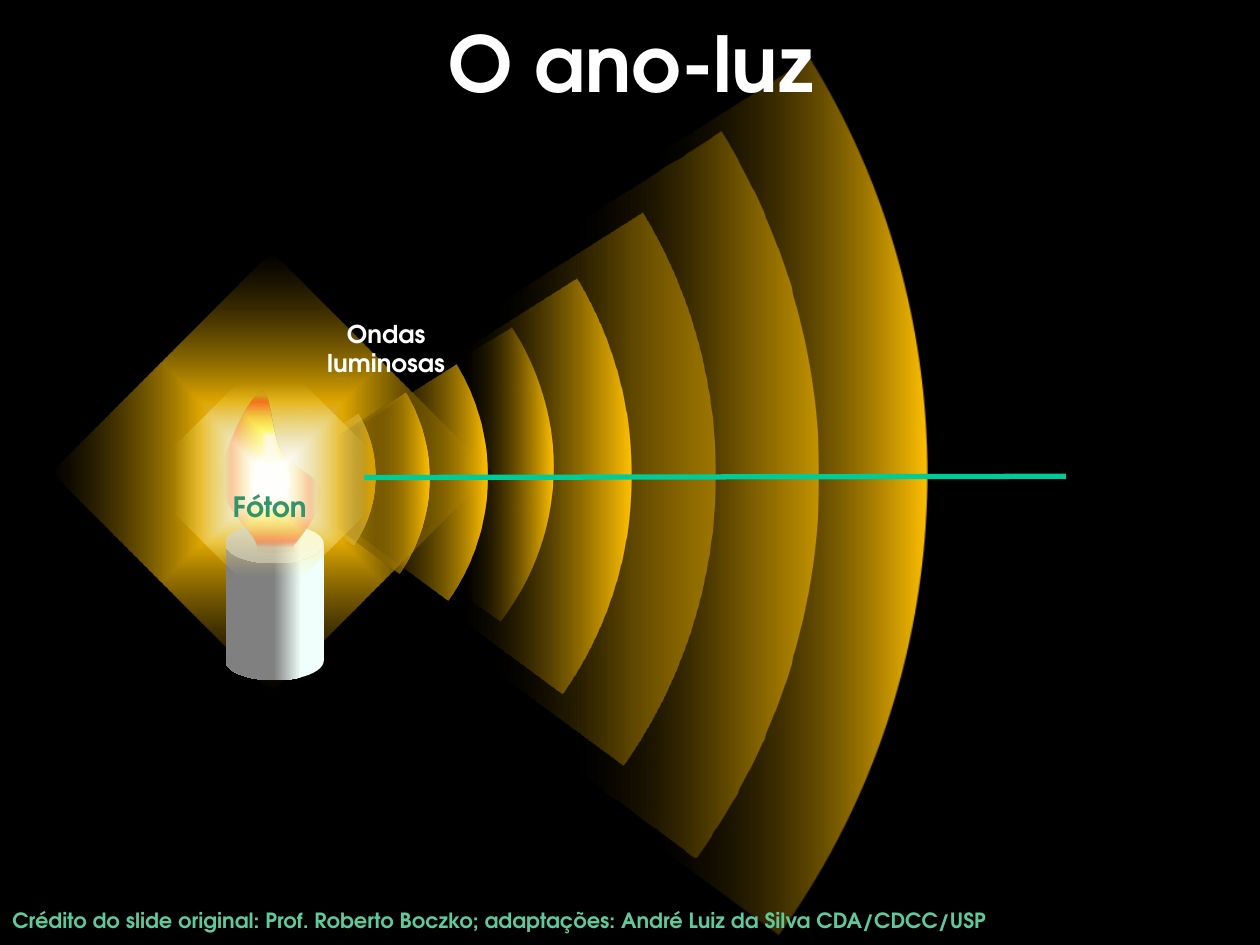
import pptx
import pptx.dml.color
import pptx.enum.shapes
import pptx.enum.text
import pptx.oxml
import pptx.oxml.ns
import pptx.util
from pptx.util import Inches

RGBColor = pptx.dml.color.RGBColor
SHAPE = pptx.enum.shapes.MSO_SHAPE
ALIGN = pptx.enum.text.PP_ALIGN
qn = pptx.oxml.ns.qn

FONT = "TeX Gyre Adventor"
BLACK = RGBColor(0x00, 0x00, 0x00)
WHITE = RGBColor(0xFF, 0xFF, 0xFF)
AMBER = RGBColor(0xFF, 0xC0, 0x00)
SILVER = RGBColor(0xDB, 0xDB, 0xDB)
GRAY = RGBColor(0x80, 0x80, 0x80)
WAX = RGBColor(0xF0, 0xFF, 0xFB)
YELLOW = RGBColor(0xFF, 0xFF, 0x00)
PALE_YELLOW = RGBColor(0xFD, 0xE6, 0x5D)
ORANGE = RGBColor(0xEA, 0x8D, 0x04)
RED = RGBColor(0xFF, 0x33, 0x00)
DARK_RED = RGBColor(0xC0, 0x00, 0x00)
RAY_GREEN = RGBColor(0x00, 0xCC, 0x99)
CREDIT_GREEN = RGBColor(0x60, 0xC9, 0x9C)
PHOTON_GREEN = RGBColor(0x32, 0x94, 0x6A)

ARC_START, ARC_END = -32.3, 36.4


def paint_gradient(shape, stops, angle=None):
    marks = "".join(
        f'<a:gs pos="{position * 1000}"><a:srgbClr val="{color}">'
        f'<a:alpha val="{opacity * 1000}"/></a:srgbClr></a:gs>'
        for position, color, opacity in stops
    )
    if angle is None:
        direction = ('<a:path path="shape"><a:fillToRect l="50000" t="50000" '
                     'r="50000" b="50000"/></a:path>')
    else:
        direction = f'<a:lin ang="{angle * 60000}" scaled="1"/>'
    gradient = pptx.oxml.parse_xml(
        f'<a:gradFill {pptx.oxml.ns.nsdecls("a")} rotWithShape="1">'
        f'<a:gsLst>{marks}</a:gsLst>{direction}</a:gradFill>'
    )
    shape.fill.background()
    properties = shape.element.spPr
    properties.replace(properties.find(qn("a:noFill")), gradient)
    shape.line.fill.background()
    shape.shadow.inherit = False


def add_preset(shapes, kind, box, stops, angle=None, rotation=0, flip=False):
    shape = shapes.add_shape(kind, *map(Inches, box))
    shape.rotation = rotation
    if flip:
        shape.element.spPr.find(qn("a:xfrm")).set("flipH", "1")
    paint_gradient(shape, stops, angle)
    return shape


def add_wave(shapes, left, top, width, height, fade, near=(0, AMBER, 100), far=BLACK):
    wave = add_preset(shapes, SHAPE.ARC, (left, top, width, height),
                      [near, (fade, far, 0)], 180)
    wave.adjustments[0] = ARC_START % 360 * 0.6
    wave.adjustments[1] = ARC_END * 0.6


def curve_points(start, curves, steps=16):
    points = [start]
    for a, b, end in curves:
        begin = points[-1]
        for step in range(1, steps + 1):
            t = step / steps
            u = 1 - t
            points.append(tuple(
                u**3 * p + 3 * u * u * t * q + 3 * u * t * t * r + t**3 * s
                for p, q, r, s in zip(begin, a, b, end)
            ))
    return points


def add_outline(shapes, points, stops, angle=None):
    corners = [(Inches(x), Inches(y)) for x, y in points]
    builder = shapes.build_freeform(*corners[0])
    builder.add_line_segments(corners[1:], close=True)
    paint_gradient(builder.convert_to_shape(), stops, angle)


def write_lines(frame, lines, size, color, align):
    for number, line in enumerate(lines):
        paragraph = frame.paragraphs[0] if number == 0 else frame.add_paragraph()
        paragraph.alignment = align
        run = paragraph.add_run()
        run.text = line
        run.font.name = FONT
        run.font.size = pptx.util.Pt(size)
        run.font.bold = True
        run.font.color.rgb = color


def add_label(shapes, box, lines, size, color, align=ALIGN.CENTER, wrap=False):
    label = shapes.add_textbox(*map(Inches, box))
    label.text_frame.word_wrap = wrap
    label.text_frame.auto_size = pptx.enum.text.MSO_AUTO_SIZE.SHAPE_TO_FIT_TEXT
    write_lines(label.text_frame, lines, size, color, align)


def place_title(slide):
    title = slide.shapes.title
    title.left, title.top, title.width, title.height = map(Inches, (0.11, 0.07, 9.8, 0.84))
    title.text_frame.vertical_anchor = pptx.enum.text.MSO_ANCHOR.MIDDLE
    write_lines(title.text_frame, ["O ano-luz"], 44, WHITE, ALIGN.CENTER)
    title.element.getparent().append(title.element)


def add_candle(shapes):
    candle = shapes.add_group_shape().shapes
    body = add_preset(candle, SHAPE.CAN, (1.79, 4.16, 0.78, 1.24),
                      [(23, WAX, 100), (51, GRAY, 100)], 0, flip=True)
    body.adjustments[0] = 0.4
    flame = curve_points((2.33, 4.32), [
        ((2.45, 4.17), (2.56, 4.02), (2.54, 3.89)),
        ((2.53, 3.77), (2.3, 3.71), (2.23, 3.58)),
        ((2.15, 3.45), (2.15, 3.07), (2.07, 3.1)),
        ((1.99, 3.14), (1.76, 3.59), (1.75, 3.79)),
        ((1.74, 3.98), (1.96, 4.17), (2.01, 4.26)),
        ((2.07, 4.36), (2.01, 4.35), (2.07, 4.37)),
        ((2.12, 4.39), (2.23, 4.38), (2.33, 4.37)),
    ])
    add_outline(candle, flame, [(8, WHITE, 100), (19, YELLOW, 100), (57, ORANGE, 100),
                                (76, RED, 75), (89, DARK_RED, 5)])


def add_ray(shapes):
    ray = shapes.add_connector(pptx.enum.shapes.MSO_CONNECTOR.STRAIGHT,
                               *map(Inches, (8.46, 3.78, 2.89, 3.79)))
    ray.line.color.rgb = RAY_GREEN
    ray.line.width = pptx.util.Pt(3)
    ray.element.spPr.append(pptx.oxml.parse_xml(
        f'<a:effectLst {pptx.oxml.ns.nsdecls("a")}/>'))


def add_photon(shapes):
    photon = shapes.add_group_shape().shapes
    add_preset(photon, SHAPE.OVAL, (1.98, 3.63, 0.33, 0.33),
               [(0, YELLOW, 100), (41, WHITE, 100), (97, YELLOW, 100)], flip=True)
    add_preset(photon, SHAPE.RECTANGLE, (1.42, 3.08, 1.45, 1.45),
               [(12, WHITE, 100), (75, PALE_YELLOW, 0)], rotation=315)
    add_label(photon, (1.73, 3.84, 0.82, 0.37), ["Fóton"], 16, PHOTON_GREEN)


def main():
    deck = pptx.Presentation()
    deck.slide_width, deck.slide_height = Inches(10), Inches(7.5)
    slide = deck.slides.add_slide(deck.slide_layouts[5])
    slide.background.fill.solid()
    slide.background.fill.fore_color.rgb = BLACK
    shapes = slide.shapes

    for far_wave in [(-2.06, -0.19, 7.74, 7.91, 24), (-3.67, -1.37, 10.17, 10.29, 20),
                     (-0.8, 0.8, 5.81, 5.94, 25), (-4.92, -2.45, 12.28, 12.42, 19)]:
        add_wave(shapes, *far_wave)
    middle_wave = curve_points((4.06, 2.6), [
        ((4.27, 2.93), (4.39, 3.32), (4.39, 3.7)),
        ((4.39, 4.15), (4.24, 4.57), (3.97, 4.93)),
    ])
    add_outline(shapes, middle_wave + [(2.23, 3.7)],
                [(0, AMBER, 100), (35, BLACK, 0)], 180)
    add_preset(shapes, SHAPE.RECTANGLE, (0.92, 2.51, 2.47, 2.47),
               [(7, WHITE, 79), (32, AMBER, 87), (100, BLACK, 44)], rotation=225)
    place_title(slide)
    add_wave(shapes, 0.57, 2.1, 3.3, 3.36, 33)
    add_wave(shapes, 0.88, 2.51, 2.53, 2.58, 29)
    add_wave(shapes, 1.14, 2.84, 1.84, 1.88, 16, (2, AMBER, 71), SILVER)
    add_label(shapes, (2.48, 2.48, 1.17, 0.58), ["Ondas", "luminosas"], 14, WHITE)
    add_label(shapes, (0, 7.15, 10, 0.3),
              ["Crédito do slide original: Prof. Roberto Boczko; adaptações: "
               "André Luiz da Silva CDA/CDCC/USP"],
              12, CREDIT_GREEN, ALIGN.LEFT, True)
    add_candle(shapes)
    add_ray(shapes)
    add_photon(shapes)
    deck.save("out.pptx")


if __name__ == "__main__":
    main()
